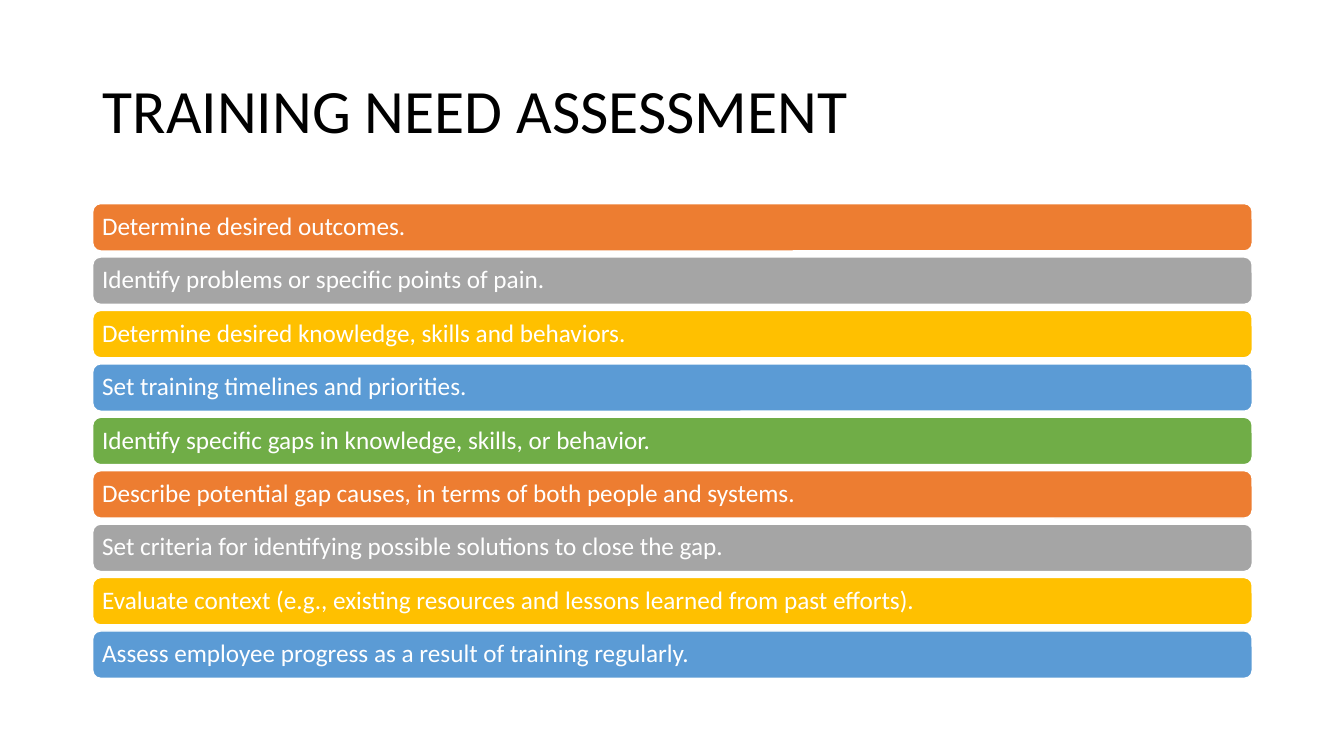
from itertools import cycle

from pptx import Presentation
from pptx.dml import color
from pptx.enum import shapes, text
from pptx.util import Inches, Pt

COLOURS = {
    "title": "000000",
    "light": "FFFFFF",
    "orange": "ED7D31",
    "grey": "A5A5A5",
    "gold": "FFC000",
    "blue": "5B9BD5",
    "green": "70AD47",
}
BAR_COLOURS = ("orange", "grey", "gold", "blue", "green")
FONT = "Calibri"
STEPS = (
    "Determine desired outcomes.",
    "Identify problems or specific points of pain.",
    "Determine desired knowledge, skills and behaviors.",
    "Set training timelines and priorities.",
    "Identify specific gaps in knowledge, skills, or behavior.",
    "Describe potential gap causes, in terms of both people and systems.",
    "Set criteria for identifying possible solutions to close the gap.",
    "Evaluate context (e.g., existing resources and lessons learned from past efforts).",
    "Assess employee progress as a result of training regularly.",
)


def rgb(name):
    """Return the named colour."""
    return color.RGBColor.from_string(COLOURS[name])


def write(shape, wording, size, colour):
    """Write one left-aligned, vertically centred paragraph in a shape."""
    frame = shape.text_frame
    frame.word_wrap = True
    frame.vertical_anchor = text.MSO_ANCHOR.MIDDLE
    para = frame.paragraphs[0]
    para.alignment = text.PP_ALIGN.LEFT
    para.line_spacing = 0.9
    span = para.add_run()
    span.text = wording
    span.font.name = FONT
    span.font.size = Pt(size)
    span.font.color.rgb = rgb(colour)


def add_title(page, left, top, width, height):
    """Place the slide title in the given box."""
    box = page.shapes.add_textbox(left, top, width, height)
    write(box, "TRAINING NEED ASSESSMENT", 44, "title")


def add_steps(page, left, top, width, height):
    """Stack the assessment steps as evenly spaced bars in the given box."""
    bar_height = Inches(0.47)
    pitch = (height - bar_height) / (len(STEPS) - 1)
    for index, (step, colour) in enumerate(zip(STEPS, cycle(BAR_COLOURS))):
        bar = page.shapes.add_shape(
            shapes.MSO_SHAPE.ROUNDED_RECTANGLE,
            left, round(top + index * pitch), width, bar_height,
        )
        bar.shadow.inherit = False
        bar.fill.solid()
        bar.fill.fore_color.rgb = rgb(colour)
        bar.line.color.rgb = rgb("light")
        bar.line.width = Pt(1)
        frame = bar.text_frame
        frame.margin_left = frame.margin_right = Inches(0.07)
        frame.margin_top = frame.margin_bottom = Inches(0.07)
        write(bar, step, 18, "light")


def main():
    """Build and save the slide."""
    deck = Presentation()
    deck.slide_width, deck.slide_height = Inches(13.33), Inches(7.5)
    page = deck.slides.add_slide(deck.slide_layouts[6])
    left, width = Inches(0.92), Inches(11.5)
    add_title(page, left, Inches(0.4), width, Inches(1.45))
    add_steps(page, left, Inches(2.02), width, Inches(4.71))
    deck.save("out.pptx")


if __name__ == "__main__":
    main()
